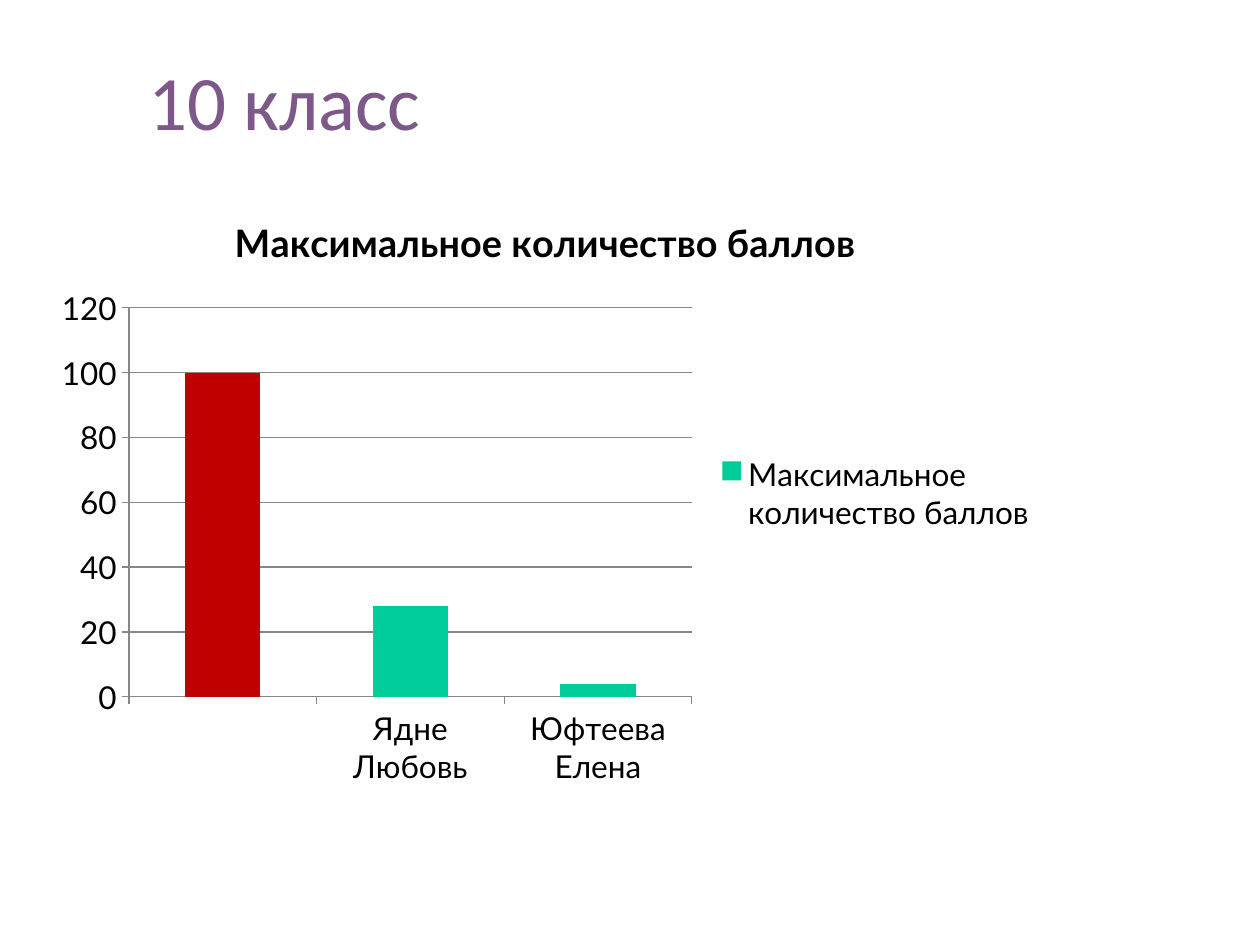
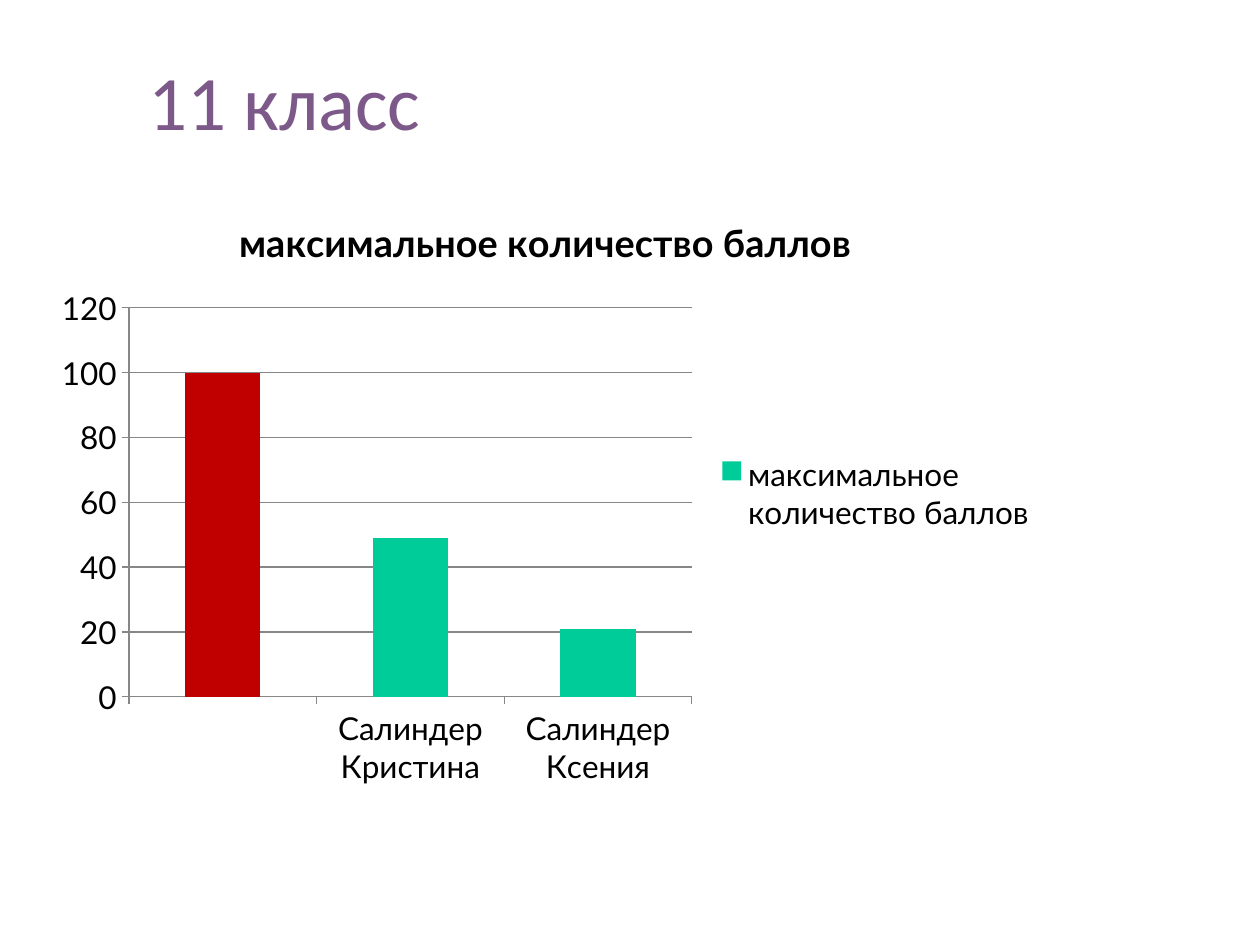
from dataclasses import dataclass

from pptx import Presentation
from pptx.chart.data import CategoryChartData
from pptx.dml.color import RGBColor
from pptx.enum.chart import XL_CHART_TYPE, XL_LEGEND_POSITION, XL_TICK_MARK
from pptx.enum.text import MSO_ANCHOR
from pptx.util import Inches, Pt


@dataclass(frozen=True)
class Theme:
    heading: RGBColor = RGBColor(0x7C, 0x59, 0x89)
    text: RGBColor = RGBColor(0, 0, 0)
    score: RGBColor = RGBColor(0x00, 0xCC, 0x99)
    maximum: RGBColor = RGBColor(0xC0, 0x00, 0x00)
    grid: RGBColor = RGBColor(0x87, 0x87, 0x87)
    heading_font: str = "Calibri"
    chart_font: str = "Lato"
    heading_size: Pt = Pt(44)
    chart_title_size: Pt = Pt(21.6)
    chart_size: Pt = Pt(18)


THEME = Theme()

# Heading, chart type, overlap, measure, pupils, scores (the first is the maximum)
GRADES = [
    ("10 класс", XL_CHART_TYPE.COLUMN_CLUSTERED, 0,
     "Максимальное количество баллов",
     ["", "Ядне Любовь", "Юфтеева Елена"], [100, 28, 4]),
    ("11 класс", XL_CHART_TYPE.COLUMN_STACKED, 100,
     "максимальное количество баллов",
     ["", "Салиндер Кристина", "Салиндер Ксения"], [100, 49, 21]),
]


def style_font(font, name, size, color, bold=False):
    font.name = name
    font.size = size
    font.bold = bold
    font.color.rgb = color


prs = Presentation()
prs.slide_width = Inches(10)
prs.slide_height = Inches(7.5)

for grade, chart_type, overlap, measure, pupils, scores in GRADES:
    slide = prs.slides.add_slide(prs.slide_layouts[6])

    heading = slide.shapes.add_textbox(
        Inches(1.08), Inches(0.33), Inches(8.75), Inches(0.92)).text_frame
    heading.word_wrap = True
    heading.vertical_anchor = MSO_ANCHOR.MIDDLE
    heading.text = grade
    style_font(heading.paragraphs[0].runs[0].font, THEME.heading_font,
               THEME.heading_size, THEME.heading)

    results = CategoryChartData()
    results.categories = pupils
    results.add_series(measure, scores)
    chart = slide.shapes.add_chart(
        chart_type, Inches(0.33), Inches(1.5), Inches(8), Inches(4.83), results).chart
    style_font(chart.font, THEME.chart_font, THEME.chart_size, THEME.text)

    chart.has_title = True
    chart_title = chart.chart_title
    chart_title.include_in_layout = False
    chart_title.text_frame.text = measure
    style_font(chart_title.text_frame.paragraphs[0].runs[0].font, THEME.chart_font,
               THEME.chart_title_size, THEME.text, bold=True)

    chart.has_legend = True
    chart.legend.position = XL_LEGEND_POSITION.RIGHT
    chart.legend.include_in_layout = False

    chart.value_axis.has_major_gridlines = True
    chart.category_axis.has_major_gridlines = False
    for axis in (chart.category_axis, chart.value_axis):
        axis.major_tick_mark = XL_TICK_MARK.OUTSIDE
        axis.minor_tick_mark = XL_TICK_MARK.NONE
        axis.format.line.color.rgb = THEME.grid
    chart.value_axis.major_gridlines.format.line.color.rgb = THEME.grid

    plot = chart.plots[0]
    plot.vary_by_categories = False
    plot.gap_width = 150
    plot.overlap = overlap
    columns = plot.series[0]
    columns.invert_if_negative = False
    for part, color in ((columns, THEME.score), (columns.points[0], THEME.maximum)):
        part.format.fill.solid()
        part.format.fill.fore_color.rgb = color

prs.save("out.pptx")
